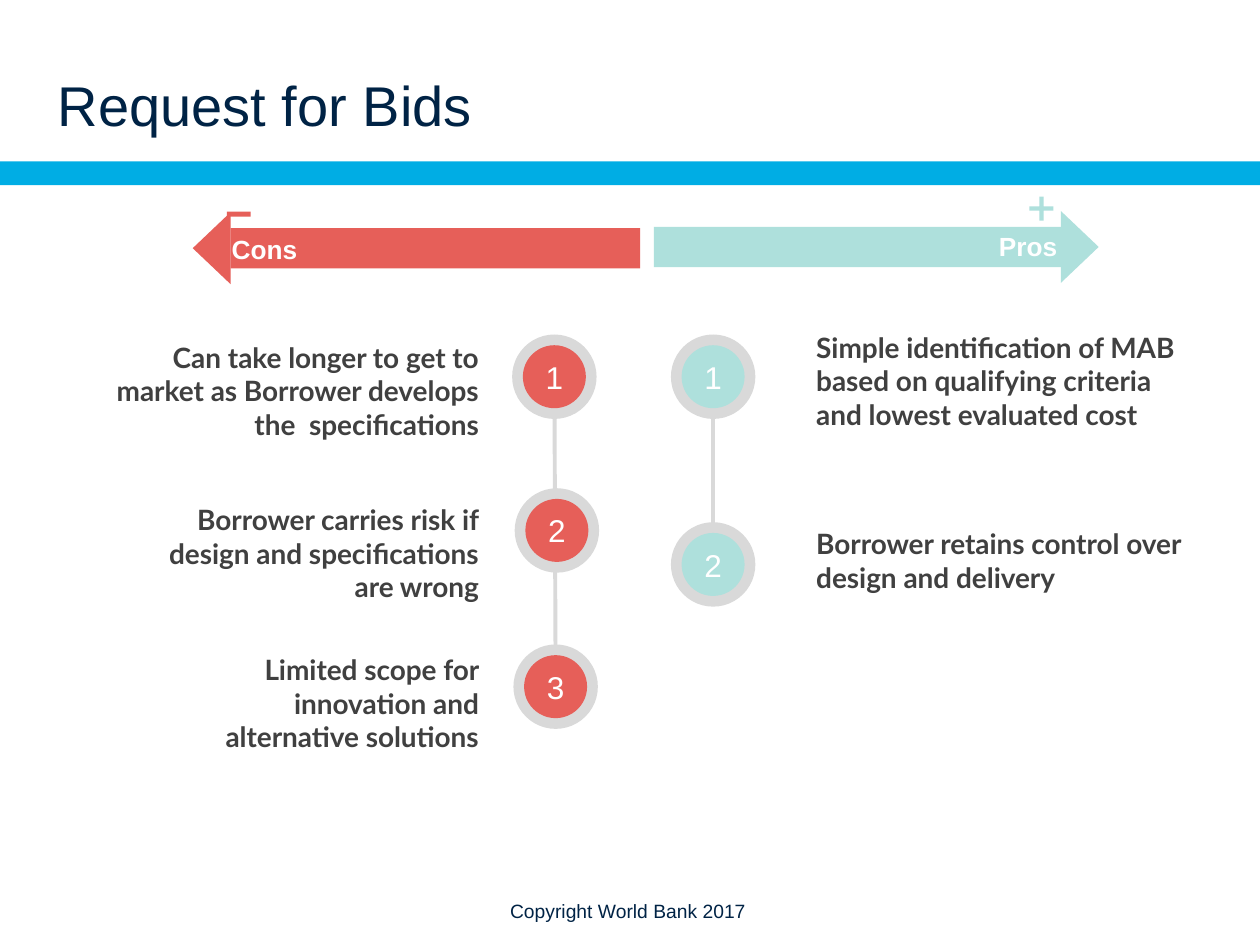
from lxml import etree
from pptx import Presentation
from pptx.dml.color import RGBColor
from pptx.enum.shapes import MSO_CONNECTOR, MSO_SHAPE
from pptx.enum.text import MSO_ANCHOR, MSO_AUTO_SIZE, PP_ALIGN
from pptx.oxml.ns import qn
from pptx.util import Inches, Pt

RECT, OVAL, PLUS = MSO_SHAPE.RECTANGLE, MSO_SHAPE.OVAL, MSO_SHAPE.CROSS
LEFT, CENTER, RIGHT = PP_ALIGN.LEFT, PP_ALIGN.CENTER, PP_ALIGN.RIGHT

NAVY = RGBColor(0x00, 0x23, 0x45)
BLUE = RGBColor(0x00, 0xAD, 0xE4)
RED = RGBColor(0xE6, 0x5F, 0x59)
MINT = RGBColor(0xAE, 0xE0, 0xDC)
RING = RGBColor(0xD9, 0xD9, 0xD9)
GREY = RGBColor(0x40, 0x40, 0x40)
WHITE = RGBColor(0xFF, 0xFF, 0xFF)

RING_SIZE, DISC_SIZE = 0.67, 0.5
BAR_WIDTH, BAR_HEIGHT = 3.25, 0.32
HEAD_WIDTH, HEAD_HEIGHT = 0.3, 0.57

# Each point: circle centre (x, y), text box (left, top, width, height), text
SIDES = [
    {
        "label": "Pros", "label_box": (7.83, 1.78, 0.67, 0.35),
        "color": MINT, "align": LEFT,
        "bar": (5.19, 1.8), "head_base": 8.42, "direction": 1,
        "points": [
            (5.66, 2.99, (6.38, 2.57, 3.13, 1.18),
             "Simple identification of MAB based on qualifying criteria and lowest evaluated cost"),
            (5.66, 4.48, (6.38, 4.13, 3.13, 0.64),
             "Borrower retains control over design and delivery"),
        ],
    },
    {
        "label": "Cons", "label_box": (1.74, 1.8, 0.73, 0.35),
        "color": RED, "align": RIGHT,
        "bar": (1.83, 1.81), "head_base": 1.83, "direction": -1,
        "points": [
            (4.4, 2.99, (0.53, 2.65, 3.37, 0.91),
             "Can take longer to get to market as Borrower develops the  specifications"),
            (4.42, 4.21, (0.97, 3.94, 2.93, 0.91),
             "Borrower carries risk if design and specifications are wrong"),
            (4.41, 5.45, (1.47, 5.13, 2.43, 0.91),
             "Limited scope for innovation and alternative solutions"),
        ],
    },
]

prs = Presentation()
prs.slide_width, prs.slide_height = Inches(10), Inches(7.5)
slide = prs.slides.add_slide(prs.slide_layouts[6])
shapes = slide.shapes


def write(frame, text, *, size, color, font="Arial", bold=False, align=LEFT):
    paragraph = frame.paragraphs[0]
    paragraph.alignment = align
    run = paragraph.add_run()
    run.text = text
    run.font.size, run.font.name, run.font.bold = Pt(size), font, bold
    run.font.color.rgb = color


def add_text(box, text, wrap=True, **text_format):
    frame = shapes.add_textbox(*map(Inches, box)).text_frame
    frame.word_wrap = wrap
    frame.auto_size = MSO_AUTO_SIZE.SHAPE_TO_FIT_TEXT
    write(frame, text, **text_format)
    return frame


def paint(shape, color):
    shape.shadow.inherit = False
    shape.fill.solid()
    shape.fill.fore_color.rgb = color
    shape.line.fill.background()
    return shape


def add_shape(kind, box, color):
    return paint(shapes.add_shape(kind, *map(Inches, box)), color)


def add_circle(x, y, size, color):
    return add_shape(OVAL, (x - size / 2, y - size / 2, size, size), color)


def add_link(start, end):
    link = shapes.add_connector(MSO_CONNECTOR.STRAIGHT, *map(Inches, start + end))
    link.line.color.rgb = RING
    link.line.width = Pt(2.25)
    etree.SubElement(link._element.spPr, qn("a:effectLst"))


def add_arrow(side):
    left, top = side["bar"]
    add_shape(RECT, (left, top, BAR_WIDTH, BAR_HEIGHT), side["color"])
    base, middle = side["head_base"], top + BAR_HEIGHT / 2
    tip = base + side["direction"] * HEAD_WIDTH
    outline = shapes.build_freeform(
        Inches(base), Inches(middle - HEAD_HEIGHT / 2), scale=1.0)
    outline.add_line_segments([
        (Inches(tip), Inches(middle)),
        (Inches(base), Inches(middle + HEAD_HEIGHT / 2)),
    ], close=True)
    paint(outline.convert_to_shape(), side["color"])
    add_text(side["label_box"], side["label"], wrap=False,
             size=15, color=WHITE, bold=True)


def add_points(side):
    points = side["points"]
    for x, y, _, _ in points:
        add_circle(x, y, RING_SIZE, RING)
    add_link(points[0][:2], points[-1][:2])
    for number, (x, y, box, text) in enumerate(points, 1):
        frame = add_circle(x, y, DISC_SIZE, side["color"]).text_frame
        frame.vertical_anchor = MSO_ANCHOR.MIDDLE
        frame.margin_top = frame.margin_bottom = Inches(0.07)
        write(frame, str(number), size=18, color=WHITE, align=CENTER)
        add_text(box, text, size=16, color=GREY, font="Lato", bold=True,
                 align=side["align"])


add_text((3.95, 7.09, 2.13, 0.29), "Copyright World Bank 2017", wrap=False,
         size=11, color=NAVY)
add_shape(RECT, (0, 1.28, 10, 0.19), BLUE)

for side in SIDES:
    add_arrow(side)
    add_points(side)

plus = add_shape(PLUS, (8.17, 1.56, 0.19, 0.19), MINT)
plus.adjustments[0] = 0.41
add_shape(RECT, (1.8, 1.68, 0.19, 0.04), RED)

title = add_text((0.46, 0.26, 9.25, 0.83), "Request for Bids", size=32, color=NAVY)
title.auto_size = MSO_AUTO_SIZE.NONE
title.vertical_anchor = MSO_ANCHOR.BOTTOM
title.margin_left = title.margin_right = title.margin_top = title.margin_bottom = 0

prs.save("out.pptx")
